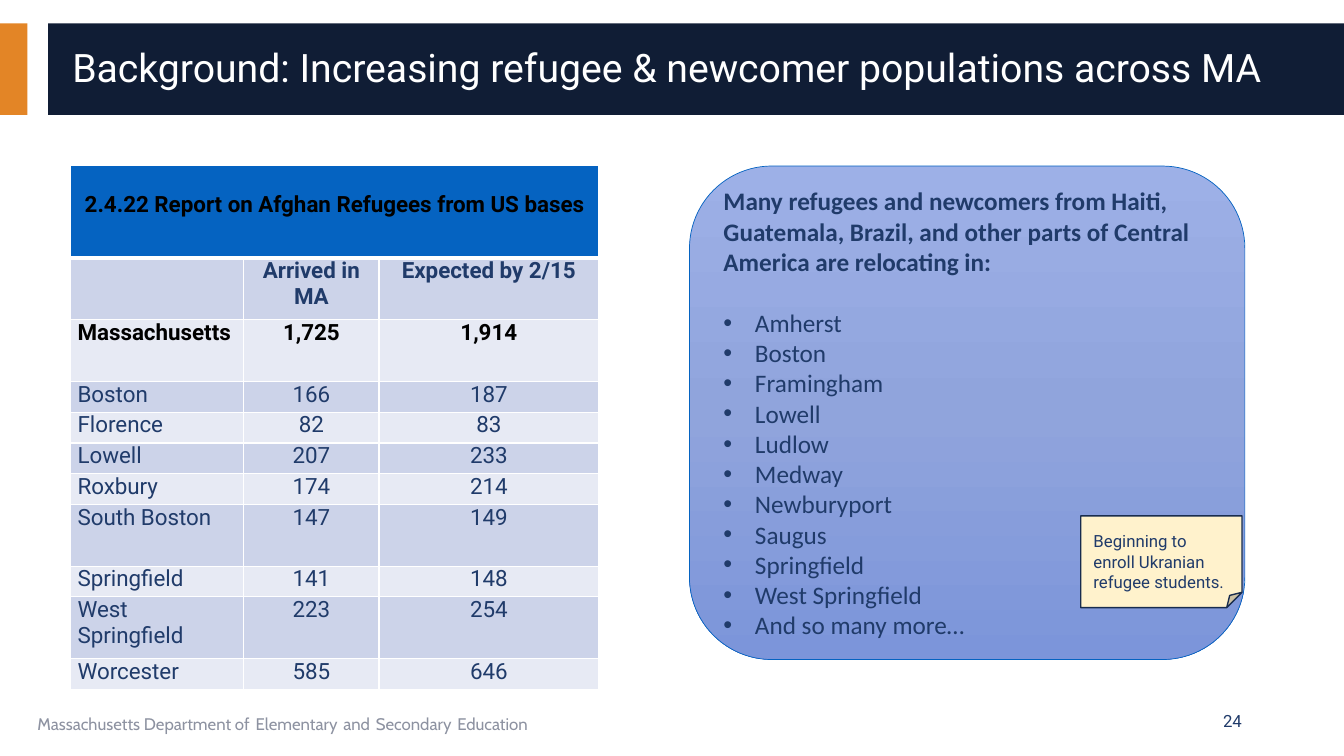
from copy import deepcopy
from dataclasses import dataclass

from lxml import etree
from pptx import Presentation
from pptx import util as u
from pptx.dml.color import RGBColor
from pptx.enum import shapes, text
from pptx.oxml import ns

SHAPE, ALIGN, ANCHOR = shapes.MSO_SHAPE, text.PP_ALIGN, text.MSO_ANCHOR


@dataclass(frozen=True)
class Theme:
    white: str = "FFFFFF"
    black: str = "000000"
    navy: str = "101D35"
    orange: str = "E38526"
    ink: str = "203B6A"
    grey: str = "8D92A1"
    blue: str = "0563C1"
    bands: tuple[str, str] = ("CCD3E9", "E7EAF4")
    panel: tuple[str, ...] = ("9DB0E7", "90A4DC", "7C95DA")
    note: str = "FFF2CC"
    note_edge: str = "182C4E"
    font: str = "Roboto"
    footer_font: str = "Cabin"
    panel_font: str = "Calibri"
    title_size: float = 28
    panel_size: float = 18
    table_size: float = 16
    small_size: float = 12


T = Theme()


@dataclass(frozen=True)
class Box:
    left: float
    top: float
    width: float
    height: float

    def emu(self) -> tuple:
        return tuple(u.Pt(v) for v in (self.left, self.top, self.width, self.height))


@dataclass(frozen=True)
class Style:
    size: float
    color: str
    font: str = T.font
    bold: bool = False


@dataclass(frozen=True)
class Label:
    box: Box
    runs: tuple[tuple[str, Style], ...]
    anchor: ANCHOR = ANCHOR.TOP
    align: ALIGN = ALIGN.LEFT
    spacing: float = 1.0


def add_run(p, words: str, style: Style) -> None:
    r = p.add_run()
    r.text = words
    r.font.size, r.font.bold, r.font.name = u.Pt(style.size), style.bold, style.font
    r.font.color.rgb = RGBColor.from_string(style.color)


def add_label(s, label: Label) -> None:
    tf = s.shapes.add_textbox(*label.box.emu()).text_frame
    tf.word_wrap, tf.vertical_anchor = True, label.anchor
    p = tf.paragraphs[0]
    p.alignment, p.line_spacing = label.align, label.spacing
    for words, style in label.runs:
        add_run(p, words, style)


def add_shape(s, kind: SHAPE, box: Box, fill: str, edge: str = "", weight: float = 1):
    sp = s.shapes.add_shape(kind, *box.emu())
    sp.shadow.inherit = False
    sp.fill.solid()
    sp.fill.fore_color.rgb = RGBColor.from_string(fill)
    if edge:
        sp.line.color.rgb = RGBColor.from_string(edge)
        sp.line.width = u.Pt(weight)
    else:
        sp.line.fill.background()
    return sp


def set_gradient(sp, colors: tuple[str, ...]) -> None:
    sp.fill.gradient()
    sp.fill.gradient_angle = 270
    stops = sp.fill.gradient_stops
    first = sp._element.spPr.find(".//" + ns.qn("a:gs"))
    for _ in range(len(colors) - len(stops)):
        first.addnext(deepcopy(first))
    for i, (stop, color) in enumerate(zip(sp.fill.gradient_stops, colors)):
        stop.position = i / (len(colors) - 1)
        stop.color.rgb = RGBColor.from_string(color)


def add_bullet(p, indent: float) -> None:
    pPr = p._p.get_or_add_pPr()
    pPr.set("marL", str(u.Pt(indent)))
    pPr.set("indent", str(u.Pt(-indent)))
    etree.SubElement(pPr, ns.qn("a:buFont")).set("typeface", "Arial")
    etree.SubElement(pPr, ns.qn("a:buChar")).set("char", "•")


def format_cell(cell, fill: str, bottom: float = 1) -> None:
    cell.margin_left = cell.margin_right = u.Pt(5)
    cell.margin_top = cell.margin_bottom = 0
    cell.fill.solid()
    cell.fill.fore_color.rgb = RGBColor.from_string(fill)
    tcPr = cell._tc.get_or_add_tcPr()
    for i, side in enumerate("LRTB"):
        ln = etree.Element(ns.qn(f"a:ln{side}"), w=str(u.Pt(bottom if side == "B" else 1)))
        solid = etree.SubElement(ln, ns.qn("a:solidFill"))
        etree.SubElement(solid, ns.qn("a:srgbClr")).set("val", T.white)
        tcPr.insert(i, ln)


def add_report(s, heading: str, rows: list, heights: list, widths: list, at: tuple) -> None:
    box = Box(*at, sum(widths), sum(heights))
    table = s.shapes.add_table(len(heights), len(widths), *box.emu()).table
    table.first_row = table.horz_banding = False
    for col, width in zip(table.columns, widths):
        col.width = u.Pt(width)
    for row, height in zip(table.rows, heights):
        row.height = u.Pt(height)

    # Heading across all columns
    for cell in table.rows[0].cells:
        format_cell(cell, T.blue, bottom=3)
    head = table.cell(0, 0)
    head.merge(table.cell(0, len(widths) - 1))
    head.margin_top = u.Pt(18.75)
    p = head.text_frame.paragraphs[0]
    p.alignment = ALIGN.CENTER
    add_run(p, heading, Style(T.table_size, T.black, bold=True))

    # Column names, state total, then towns
    for i, values in enumerate(rows):
        style = Style(T.table_size, T.black if i == 1 else T.ink, bold=i < 2)
        for j, value in enumerate(values):
            cell = table.cell(i + 1, j)
            format_cell(cell, T.bands[i % 2])
            p = cell.text_frame.paragraphs[0]
            p.alignment = ALIGN.CENTER if j else ALIGN.LEFT
            if value:
                add_run(p, value, style)


def add_panel(s, box: Box, lead: str, towns: list) -> None:
    sp = add_shape(s, SHAPE.ROUNDED_RECTANGLE, box, T.panel[0], T.blue, 0.5)
    set_gradient(sp, T.panel)
    tf = sp.text_frame
    tf.word_wrap, tf.vertical_anchor = True, ANCHOR.MIDDLE
    p = tf.paragraphs[0]
    p.alignment = ALIGN.LEFT
    add_run(p, lead, Style(T.panel_size, T.ink, T.panel_font, True))
    for i, town in enumerate(towns):
        p = tf.add_paragraph()
        p.alignment = ALIGN.LEFT
        p.space_before = u.Pt(0 if i else 22)
        add_bullet(p, 22.5)
        add_run(p, town, Style(T.panel_size, T.ink, T.panel_font))


REPORT = [
    ("", "Arrived in MA", "Expected by 2/15"), ("Massachusetts", "1,725", "1,914"),
    ("Boston", "166", "187"), ("Florence", "82", "83"), ("Lowell", "207", "233"),
    ("Roxbury", "174", "214"), ("South Boston", "147", "149"), ("Springfield", "141", "148"),
    ("West Springfield", "223", "254"), ("Worcester", "585", "646"),
]
ROW = 22
ROW_LINES = [3, 2, 2, 1, 1, 1, 1, 2, 1, 2, 1]
TOWNS = ["Amherst", "Boston", "Framingham", "Lowell", "Ludlow", "Medway", "Newburyport",
         "Saugus", "Springfield", "West Springfield", "And so many more…"]


def main() -> None:
    prs = Presentation()
    prs.slide_width, prs.slide_height = u.Pt(960), u.Pt(540)
    s = prs.slides.add_slide(prs.slide_layouts[6])

    # Title band and footer
    add_shape(s, SHAPE.RECTANGLE, Box(0, 16.6, 19.6, 65.5), T.orange)
    add_shape(s, SHAPE.RECTANGLE, Box(34.4, 16.6, 925.6, 65.5), T.navy)
    footer = Style(T.small_size, T.grey, T.footer_font)
    gap = Style(T.panel_size, T.ink, T.footer_font)
    runs = [("Massachusetts Department of", footer)]
    for word in ("Elementary", "and", "Secondary", "Education"):
        runs += [(" ", gap), (word, footer)]
    add_label(s, Label(Box(19.6, 500.4, 607.7, 29), tuple(runs)))
    add_label(s, Label(Box(44.6, 23, 895.7, 53.3),
                       (("Background: Increasing refugee & newcomer populations across MA",
                         Style(T.title_size, T.white)),), ANCHOR.MIDDLE, spacing=0.9))

    # Refugee report and receiving towns
    add_report(s, "2.4.22 Report on Afghan Refugees from US bases", REPORT,
               [ROW * n for n in ROW_LINES], [123.8, 96.5, 157], (50.4, 118.4))
    small = Style(T.small_size, T.ink)
    add_label(s, Label(Box(678.2, 500.4, 216, 29), (("24", small),), ANCHOR.MIDDLE, ALIGN.RIGHT))
    add_panel(s, Box(492.5, 118.6, 396.7, 352.5),
              "Many refugees and newcomers from Haiti, Guatemala, Brazil, and other parts of "
              "Central America are relocating in:", TOWNS)

    # Sticky note
    add_shape(s, SHAPE.FOLDED_CORNER, Box(772, 368.5, 115.2, 65.5), T.note, T.note_edge)
    add_label(s, Label(Box(774, 375.8, 110.2, 51),
                       (("Beginning to enroll Ukranian refugee students.", small),)))

    prs.save("out.pptx")


if __name__ == "__main__":
    main()
